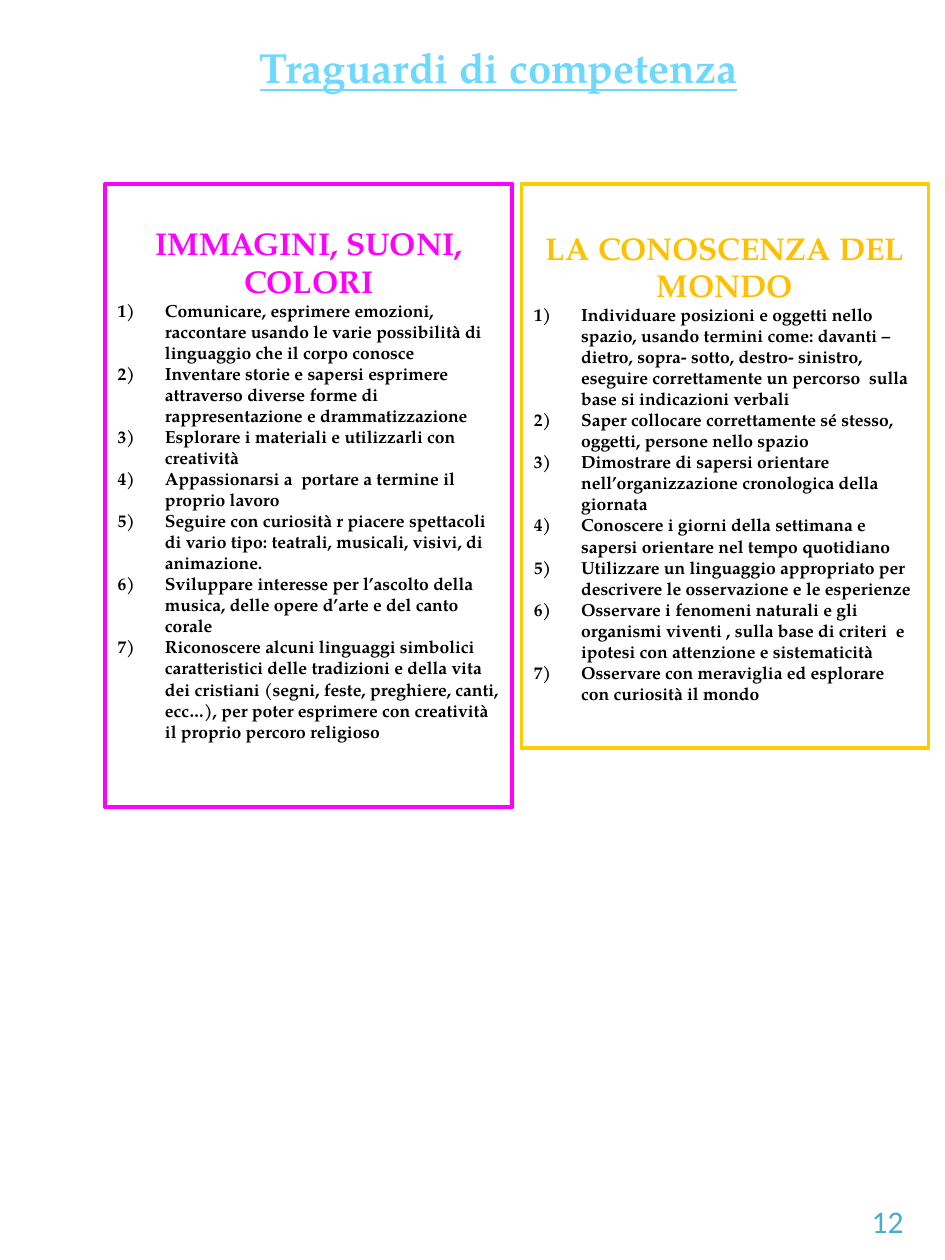
from pptx import Presentation
from pptx.dml.color import RGBColor
from pptx.enum import shapes, text
from pptx.oxml.ns import qn
from pptx.util import Pt
from lxml import etree

SERIF = "TeX Gyre Pagella"

IMAGES_GOALS = [
    "Comunicare, esprimere emozioni, raccontare usando le varie possibilità di linguaggio che il corpo conosce",
    "Inventare storie e sapersi esprimere attraverso diverse forme di rappresentazione e drammatizzazione",
    "Esplorare i materiali e utilizzarli con creatività",
    "Appassionarsi a  portare a termine il proprio lavoro",
    "Seguire con curiosità r piacere spettacoli di vario tipo: teatrali, musicali, visivi, di animazione.",
    "Sviluppare interesse per l’ascolto della musica, delle opere d’arte e del canto corale",
    "Riconoscere alcuni linguaggi simbolici  caratteristici delle tradizioni e della vita dei cristiani "
    "(segni, feste, preghiere, canti, ecc…), per poter esprimere con creatività il proprio percoro religioso",
]
WORLD_GOALS = [
    "Individuare posizioni e oggetti nello spazio, usando termini come: davanti – dietro, sopra- sotto, "
    "destro- sinistro,  eseguire correttamente un percorso  sulla base si indicazioni verbali",
    "Saper collocare correttamente sé stesso, oggetti, persone nello spazio",
    "Dimostrare di sapersi orientare nell’organizzazione cronologica della giornata",
    "Conoscere i giorni della settimana e sapersi orientare nel tempo quotidiano",
    "Utilizzare un linguaggio appropriato per descrivere le osservazione e le esperienze",
    "Osservare i fenomeni naturali e gli organismi viventi , sulla base di criteri  e ipotesi "
    "con attenzione e sistematicità",
    "Osservare con meraviglia ed esplorare con curiosità il mondo",
]


def rgb(value):
    return RGBColor.from_string(value)


def style(p, size, color, name=SERIF, bold=True, align=text.PP_ALIGN.LEFT):
    p.alignment = align
    p.font.size, p.font.name, p.font.bold = Pt(size), name, bold
    p.font.color.rgb = rgb(color)


def number(p, indent):
    """Give a paragraph a hanging automatic number: 1), 2), ..."""
    pPr = p._p.get_or_add_pPr()
    pPr.set("marL", str(Pt(indent)))
    pPr.set("indent", str(-Pt(indent)))
    bullet = etree.Element(qn("a:buAutoNum"), type="arabicParenR")
    pPr.find(qn("a:defRPr")).addprevious(bullet)


def add_title(s, box, words):
    sp = s.shapes.title
    sp.left, sp.top, sp.width, sp.height = map(Pt, box)
    tf = sp.text_frame
    tf.text = words
    tf.word_wrap = False
    tf.auto_size = text.MSO_AUTO_SIZE.NONE
    tf.vertical_anchor = text.MSO_ANCHOR.TOP
    p = tf.paragraphs[0]
    style(p, 24, "6DD9FF", align=text.PP_ALIGN.CENTER)
    p.font.underline = True


def add_goals(s, box, heading, goals, line, color, top_margin):
    sp = s.shapes.add_shape(shapes.MSO_SHAPE.RECTANGLE, *map(Pt, box))
    sp.shadow.inherit = False
    sp.fill.background()
    sp.line.color.rgb = rgb(line)
    sp.line.width = Pt(2.25)
    tf = sp.text_frame
    tf.word_wrap = True
    tf.vertical_anchor = text.MSO_ANCHOR.TOP
    tf.margin_top = Pt(top_margin)
    # Heading
    p = tf.paragraphs[0]
    p.text = heading
    style(p, 18, color, align=text.PP_ALIGN.CENTER)
    # Numbered goals
    for goal in goals:
        p = tf.add_paragraph()
        p.text = goal
        style(p, 10, "000000")
        number(p, 27)


def add_page_number(s, box, words):
    tf = s.shapes.add_textbox(*map(Pt, box)).text_frame
    tf.word_wrap = True
    p = tf.paragraphs[0]
    p.text = words
    style(p, 18, "4BACC6", name="Calibri", bold=False)


def main():
    prs = Presentation()
    prs.slide_width, prs.slide_height = Pt(540), Pt(720)
    s = prs.slides.add_slide(prs.slide_layouts[5])

    add_title(s, (139, 20.2, 291.6, 60.5), "Traguardi di competenza")

    # Two columns of goals
    top, width = 105, 232.6
    add_goals(s, (298, top, width, 322.6), "LA CONOSCENZA DEL MONDO",
              WORLD_GOALS, "FFCC00", "FFC000", 25.6)
    add_goals(s, (60.2, top, width, 356.4), "IMMAGINI, SUONI, COLORI",
              IMAGES_GOALS, "FF00FF", "FF00FF", 23.2)

    add_page_number(s, (491, 683.3, 39.6, 28.8), "12")
    prs.save("out.pptx")


if __name__ == "__main__":
    main()
